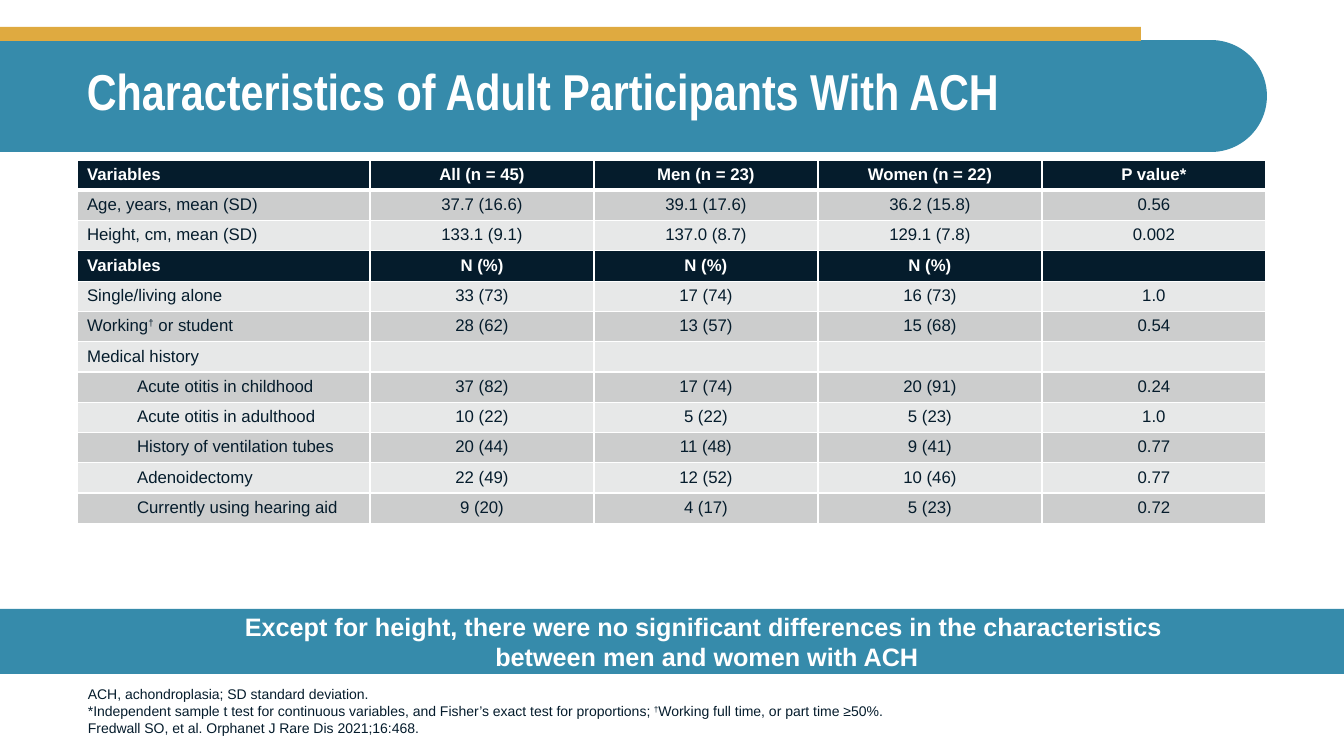
"""Build a slide with a table of the characteristics of adult participants with ACH."""
import pptx
import pptx.dml.color
import pptx.enum.shapes
import pptx.enum.text
import pptx.oxml.ns
import pptx.util
from lxml import etree

TITLE = "Characteristics of Adult Participants With ACH"
CHARACTERISTICS = [
    ("Variables", "All (n = 45)", "Men (n = 23)", "Women (n = 22)", "P value*"),
    ("Age, years, mean (SD)", "37.7 (16.6)", "39.1 (17.6)", "36.2 (15.8)", "0.56"),
    ("Height, cm, mean (SD)", "133.1 (9.1)", "137.0 (8.7)", "129.1 (7.8)", "0.002"),
    ("Variables", "N (%)", "N (%)", "N (%)", ""),
    ("Single/living alone", "33 (73)", "17 (74)", "16 (73)", "1.0"),
    ("Working† or student", "28 (62)", "13 (57)", "15 (68)", "0.54"),
    ("Medical history", "", "", "", ""),
    ("Acute otitis in childhood", "37 (82)", "17 (74)", "20 (91)", "0.24"),
    ("Acute otitis in adulthood", "10 (22)", "5 (22)", "5 (23)", "1.0"),
    ("History of ventilation tubes", "20 (44)", "11 (48)", "9 (41)", "0.77"),
    ("Adenoidectomy", "22 (49)", "12 (52)", "10 (46)", "0.77"),
    ("Currently using hearing aid", "9 (20)", "4 (17)", "5 (23)", "0.72"),
]
HEADING_ROWS = (0, 3)
FIRST_HISTORY_ROW = 7
CONCLUSION = ("Except for height, there were no significant differences in the characteristics "
              "\nbetween men and women with ACH")
FOOTNOTES = [
    "ACH, achondroplasia; SD standard deviation.",
    "*Independent sample t test for continuous variables, and Fisher’s exact test for proportions; "
    "†Working full time, or part time ≥50%.",
    "Fredwall SO, et al. Orphanet J Rare Dis 2021;16:468.",
]
COLORS = {"teal": "368BAB", "gold": "DFAA40", "navy": "051C2C", "white": "FFFFFF",
          "dark band": "CCCDCD", "light band": "E7E8E8"}

SLIDE_WIDTH, SLIDE_HEIGHT = 1344, 756
BANNER_WIDTH, BANNER_HEIGHT, BANNER_TOP = 1267, 112, 40
TABLE_LEFT, TABLE_TOP, ROW_HEIGHT = 77, 160, 29
COLUMN_WIDTHS = (293, 224, 224, 224, 224)
HISTORY_INDENT, CONCLUSION_INDENT, CONCLUSION_INSET = 50, 70, 80

SHAPES = pptx.enum.shapes.MSO_SHAPE
ANCHORS = pptx.enum.text.MSO_ANCHOR
CENTER = pptx.enum.text.PP_ALIGN.CENTER
qn = pptx.oxml.ns.qn


def px(length):
    return pptx.util.Emu(round(length * 12192000 / SLIDE_WIDTH))


def color(name):
    return pptx.dml.color.RGBColor.from_string(COLORS[name])


def write(paragraph, text, size, ink, bold=False, face="Arial", align=None, indent=0):
    before, dagger, after = text.partition("†")
    if dagger:
        for part in (before, dagger, after):
            if part:
                run = paragraph.add_run()
                run.text = part
                if part == dagger:
                    run.font._element.set("baseline", "30000")
    else:
        paragraph.text = text
    paragraph.alignment = align
    if indent:
        paragraph._p.get_or_add_pPr().set("marL", str(px(indent)))
    font = paragraph.font
    font.size, font.bold, font.name = pptx.util.Pt(size), bold, face
    font.color.rgb = color(ink)
    if not text:
        etree.SubElement(paragraph._p, qn("a:endParaRPr"), sz=str(size * 100))


def add_bar(slide, preset, left, top, width, height, fill):
    bar = slide.shapes.add_shape(preset, px(left), px(top), px(width), px(height))
    bar.shadow.inherit = False
    bar.fill.solid()
    bar.fill.fore_color.rgb = color(fill)
    bar.line.fill.background()
    return bar


def add_text_frame(slide, left, top, width, height, anchor):
    frame = slide.shapes.add_textbox(px(left), px(top), px(width), px(height)).text_frame
    frame.word_wrap = True
    frame.vertical_anchor = anchor
    return frame


def set_borders(cell, widths):
    properties = cell._tc.get_or_add_tcPr()
    for place, (side, points) in enumerate(widths.items()):
        border = etree.Element(qn("a:ln" + side), w=str(pptx.util.Pt(points)))
        solid = etree.SubElement(border, qn("a:solidFill"))
        etree.SubElement(solid, qn("a:srgbClr"), val=COLORS["white"])
        properties.insert(place, border)


def add_banner(slide):
    banner = add_bar(slide, SHAPES.ROUND_2_SAME_RECTANGLE,
                     (BANNER_WIDTH - BANNER_HEIGHT) / 2,
                     BANNER_TOP + (BANNER_HEIGHT - BANNER_WIDTH) / 2,
                     BANNER_HEIGHT, BANNER_WIDTH, "teal")
    banner.rotation = 270
    banner.adjustments[0], banner.adjustments[1] = 0, 0.5
    add_bar(slide, SHAPES.RECTANGLE, 0, 27, 1141, 14, "gold")
    title = add_text_frame(slide, TABLE_LEFT, 39, 1190, 111, ANCHORS.MIDDLE).paragraphs[0]
    write(title, TITLE, 36, "white", bold=True, face="Arial Narrow")
    title.line_spacing = 0.9


def add_characteristics(slide):
    row_count = len(CHARACTERISTICS)
    table = slide.shapes.add_table(
        row_count, len(COLUMN_WIDTHS), px(TABLE_LEFT), px(TABLE_TOP),
        px(sum(COLUMN_WIDTHS)), px(ROW_HEIGHT * row_count)).table
    for column, width in zip(table.columns, COLUMN_WIDTHS):
        column.width = px(width)
    for r, values in enumerate(CHARACTERISTICS):
        table.rows[r].height = px(ROW_HEIGHT)
        heading = r in HEADING_ROWS
        band = "navy" if heading else "dark band" if r % 2 else "light band"
        for c, value in enumerate(values):
            cell = table.cell(r, c)
            cell.fill.solid()
            cell.fill.fore_color.rgb = color(band)
            set_borders(cell, {"L": 1, "R": 1, "T": 3 if r == 1 else 1, "B": 3 if r == 0 else 1})
            write(cell.text_frame.paragraphs[0], value, 12,
                  "white" if heading else "navy", bold=heading,
                  align=CENTER if c else None,
                  indent=HISTORY_INDENT if r >= FIRST_HISTORY_ROW and c == 0 else 0)


def add_conclusion(slide):
    frame = add_bar(slide, SHAPES.RECTANGLE, 0, 609, SLIDE_WIDTH, 65, "teal").text_frame
    frame.word_wrap = True
    frame.vertical_anchor = ANCHORS.MIDDLE
    frame.margin_left = frame.margin_right = px(CONCLUSION_INSET)
    write(frame.paragraphs[0], CONCLUSION, 18, "white", bold=True,
          align=CENTER, indent=CONCLUSION_INDENT)


def add_footnotes(slide):
    frame = add_text_frame(slide, 78, 676, 996, 65, ANCHORS.BOTTOM)
    for i, note in enumerate(FOOTNOTES):
        write(frame.add_paragraph() if i else frame.paragraphs[0], note, 10, "navy")


def main():
    deck = pptx.Presentation()
    deck.slide_width, deck.slide_height = px(SLIDE_WIDTH), px(SLIDE_HEIGHT)
    slide = deck.slides.add_slide(deck.slide_layouts[6])
    add_banner(slide)
    add_footnotes(slide)
    add_conclusion(slide)
    add_characteristics(slide)
    deck.save("out.pptx")


if __name__ == "__main__":
    main()
